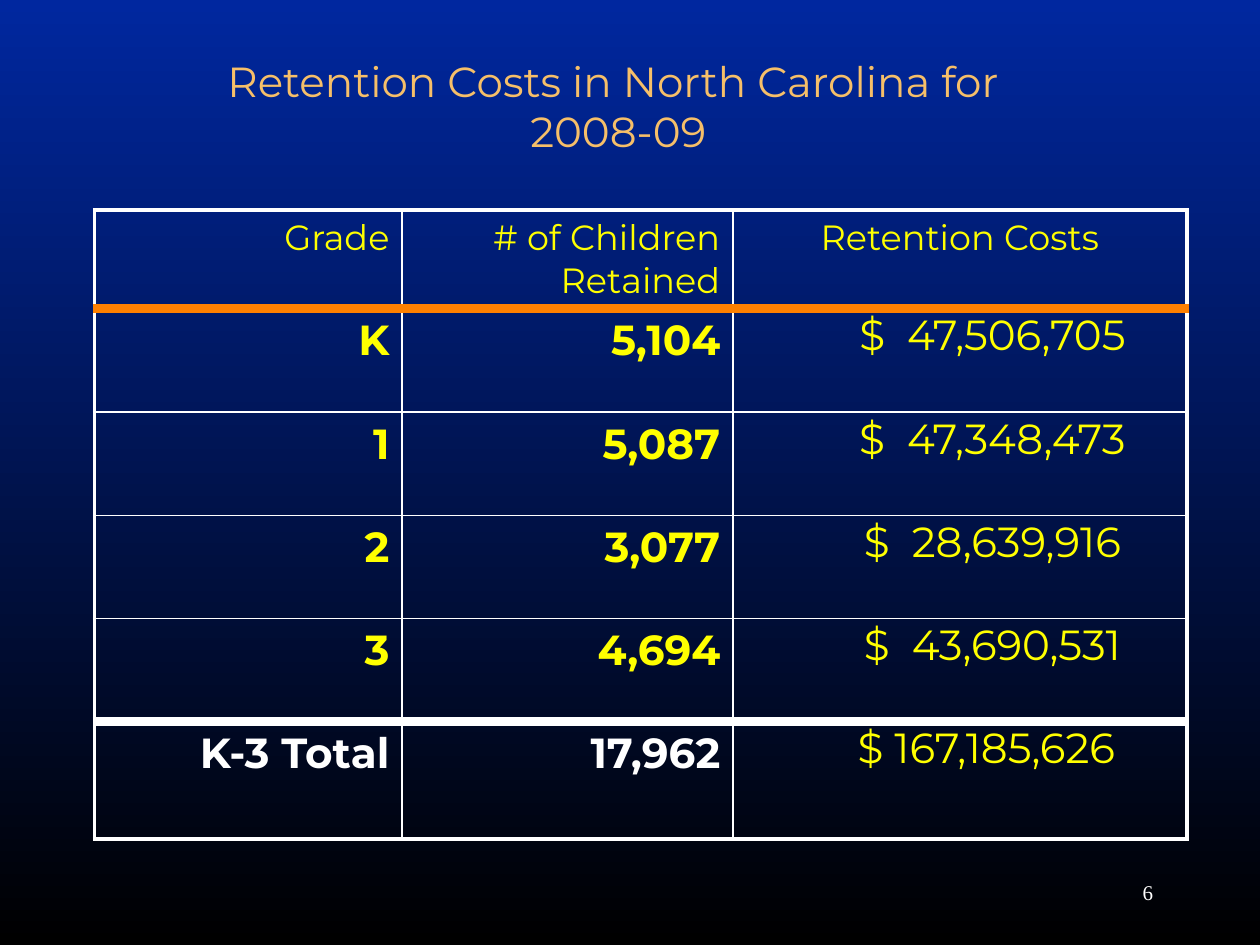
"""Build a slide with a table of grade retention costs in North Carolina."""
from lxml.etree import SubElement
from pptx import Presentation
from pptx.dml.color import RGBColor
from pptx.enum.text import MSO_ANCHOR as Anchor, PP_ALIGN as Align
from pptx.oxml.ns import qn
from pptx.util import Pt

WHITE, YELLOW, ORANGE, GOLD = "FFFFFF", "FFFF00", "FF8000", "F6BF69"
THIN, OUTER, HEAVY = (WHITE, 1), (WHITE, 2.25), (WHITE, 6)


def style(paragraph, size, color, align, bold=False, font="Montserrat"):
    paragraph.alignment = align
    paragraph.font.name = font
    paragraph.font.size = Pt(size)
    paragraph.font.bold = bold
    paragraph.font.color.rgb = RGBColor.from_string(color)


def set_borders(cell, left, right, top, bottom):
    properties = cell._tc.get_or_add_tcPr()
    sides = {"a:lnL": left, "a:lnR": right, "a:lnT": top, "a:lnB": bottom}
    for position, (tag, (color, width)) in enumerate(sides.items()):
        line = SubElement(properties, qn(tag), w=str(Pt(width)))
        fill = SubElement(line, qn("a:solidFill"))
        SubElement(fill, qn("a:srgbClr"), val=color)
        properties.insert(position, line)


prs = Presentation()
prs.slide_width, prs.slide_height = Pt(720), Pt(540)
slide = prs.slides.add_slide(prs.slide_layouts[6])

backdrop = slide.background.fill
backdrop.gradient()
backdrop.gradient_angle = 270
for stop, color in zip(backdrop.gradient_stops, ("00279F", "000000")):
    stop.color.rgb = RGBColor.from_string(color)

title = slide.shapes.add_textbox(Pt(54), Pt(30), Pt(592.5), Pt(90)).text_frame
title.word_wrap = True
title.vertical_anchor = Anchor.MIDDLE
title.margin_bottom = Pt(32.5)
title.text = "Retention Costs in North Carolina for\v 2008-09"
style(title.paragraphs[0], 24, GOLD, Align.CENTER)

rows = [
    ("Grade", "# of Children Retained", "Retention Costs"),
    ("K", "5,104", "$  47,506,705"),
    ("1", "5,087", "$  47,348,473"),
    ("2", "3,077", "$  28,639,916"),
    ("3", "4,694", "$  43,690,531"),
    ("K-3 Total", "17,962", "$ 167,185,626"),
]
column_widths = (175.75, 189, 259.5)
row_heights = (56.5, 59, 59, 59, 59, 67)
rules = [OUTER, (ORANGE, 6), THIN, THIN, THIN, HEAVY, OUTER]
uprights = [OUTER, THIN, THIN, OUTER]
last = len(rows) - 1

costs = slide.shapes.add_table(
    len(rows), len(column_widths), Pt(54), Pt(120),
    Pt(sum(column_widths)), Pt(sum(row_heights))).table
costs.first_row = costs.horz_banding = False
for column, width in zip(costs.columns, column_widths):
    column.width = Pt(width)

for r, values in enumerate(rows):
    costs.rows[r].height = Pt(row_heights[r])
    for c, value in enumerate(values):
        cell = costs.cell(r, c)
        cell.text = value
        cell.fill.background()
        is_cost = c == 2
        style(cell.text_frame.paragraphs[0], 24 if r else 20,
              WHITE if r == last and not is_cost else YELLOW,
              Align.CENTER if is_cost else Align.RIGHT,
              bold=r > 0 and not is_cost)
        if is_cost and r:
            cell.margin_left = Pt(31 if r == last else 38)
            cell.margin_right = cell.margin_top = Pt(0.72)
            cell.margin_bottom = 0
        set_borders(cell, uprights[c], uprights[c + 1], rules[r], rules[r + 1])

page_number = slide.shapes.add_textbox(Pt(516), Pt(492), Pt(150), Pt(36)).text_frame
page_number.word_wrap = True
page_number.vertical_anchor = Anchor.MIDDLE
page_number.text = "6"
style(page_number.paragraphs[0], 12, WHITE, Align.RIGHT, font="Times New Roman")

prs.save("out.pptx")
